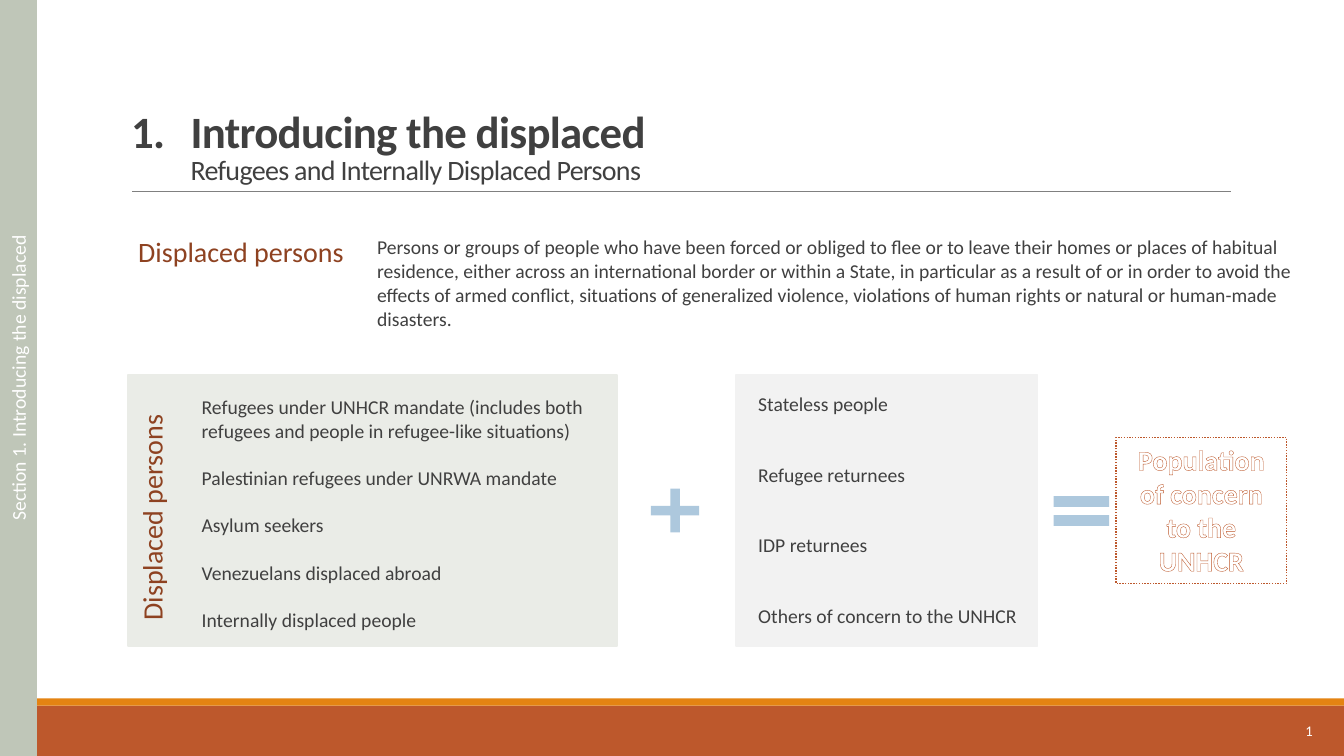
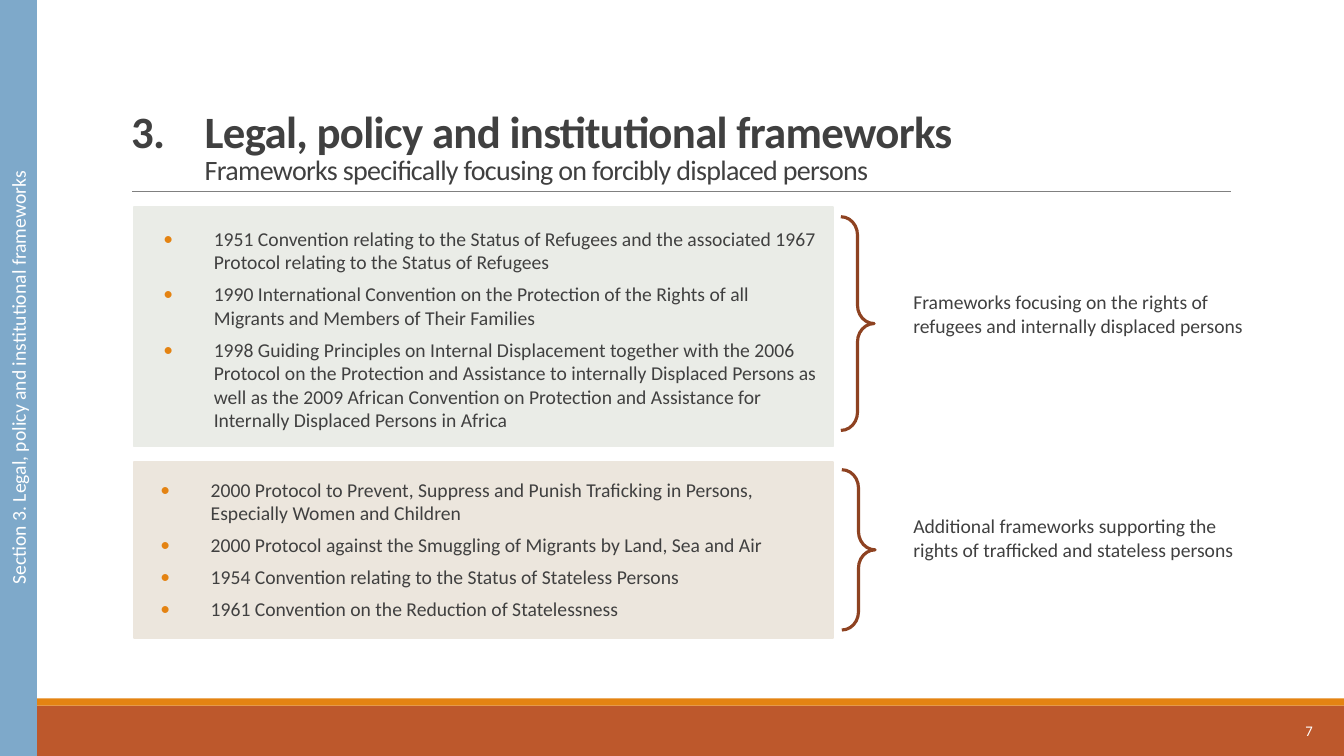
from copy import deepcopy

from lxml.etree import SubElement
from pptx import Presentation
from pptx.dml.color import RGBColor
from pptx.enum.dml import MSO_LINE
from pptx.enum.shapes import MSO_CONNECTOR, MSO_SHAPE
from pptx.enum.text import MSO_ANCHOR, MSO_AUTO_SIZE, PP_ALIGN
from pptx.oxml.ns import qn
from pptx.util import Inches, Pt

FONT = "Calibri"
WHITE = RGBColor(0xFF, 0xFF, 0xFF)
TEXT = RGBColor(0x40, 0x40, 0x40)
RULE = RGBColor(0x80, 0x80, 0x80)
RUST = RGBColor(0xBD, 0x58, 0x2C)
ORANGE = RGBColor(0xE4, 0x83, 0x12)
BROWN = RGBColor(0x8E, 0x42, 0x21)
SAGE = RGBColor(0xBF, 0xC6, 0xB8)
BLUE = RGBColor(0x7E, 0xA9, 0xCA)
PALE_BLUE = RGBColor(0xAD, 0xC8, 0xDD)
PALE_SAGE = RGBColor(0xEA, 0xEC, 0xE7)
PALE_GREY = RGBColor(0xF2, 0xF2, 0xF2)
PALE_SAND = RGBColor(0xEC, 0xE6, 0xDD)


def add_text(p, text, size=14, color=TEXT, bold=False, spacing=None, outline=None):
    r = p.add_run()
    r.text = text
    r.font.name = FONT
    r.font.size = Pt(size)
    r.font.bold = bold
    r.font.color.rgb = color
    rPr = r.font._element
    if spacing:
        rPr.set("spc", str(int(spacing * 100)))
    if outline:
        ln = SubElement(rPr, qn("a:ln"), w=str(Pt(0.5)))
        fill = SubElement(ln, qn("a:solidFill"))
        SubElement(fill, qn("a:srgbClr"), val=str(outline))
        rPr.insert(0, ln)
    return r


def hang(p, margin, indent):
    pPr = p._p.get_or_add_pPr()
    pPr.set("marL", str(Inches(margin)))
    pPr.set("indent", str(Inches(indent)))
    return pPr


def place(sp, x, y, w, h):
    sp.left, sp.top, sp.width, sp.height = map(Inches, (x, y, w, h))


class Deck:
    def __init__(self):
        self.prs = Presentation()
        self.prs.slide_width = Inches(13.33)
        self.prs.slide_height = Inches(7.5)
        self.s = None

    def slide(self, number, title, subtitle, page, color, hanging):
        self.s = self.prs.slides.add_slide(self.prs.slide_layouts[3])
        self.shape(MSO_SHAPE.RECTANGLE, 0, 7, 13.33, 0.5, fill=RUST)
        self.shape(MSO_SHAPE.RECTANGLE, 0, 6.93, 13.33, 0.07, fill=ORANGE)
        self.rule(1.31, 1.9, 12.21)
        self.title(number, title, subtitle, hanging)
        self.text(page, 11.69, 7.05, 1.43, 0.4, align=PP_ALIGN.RIGHT,
                  anchor=MSO_ANCHOR.MIDDLE, size=10.5, color=WHITE)
        bar = self.shape(MSO_SHAPE.RECTANGLE, 0, 0, 0.36, 7.5, fill=color, line=color)
        tf = bar.text_frame
        tf._txBody.bodyPr.set("vert", "vert270")
        tf.vertical_anchor = MSO_ANCHOR.MIDDLE
        tf.paragraphs[0].alignment = PP_ALIGN.CENTER
        add_text(tf.paragraphs[0], f"Section {number}. {title}", color=WHITE)

    def title(self, number, title, subtitle, hanging):
        sp = self.s.shapes.title
        place(sp, 1.2, 0.31, 11, 1.59)
        tf = sp.text_frame
        tf.auto_size = MSO_AUTO_SIZE.NONE
        tf.vertical_anchor = MSO_ANCHOR.BOTTOM
        p = tf.paragraphs[0]
        p.alignment = PP_ALIGN.LEFT
        p.line_spacing = 0.85
        hang(p, hanging, -hanging)
        r = add_text(p, f"{number}.\t{title}", size=32, bold=True, spacing=-0.5)
        p.add_line_break()
        p._p.find(qn("a:br")).append(deepcopy(r.font._element))
        add_text(p, subtitle, size=20, spacing=-0.5)

    def rule(self, x1, y, x2):
        c = self.s.shapes.add_connector(
            MSO_CONNECTOR.STRAIGHT, Inches(x1), Inches(y), Inches(x2), Inches(y))
        c.line.color.rgb = RULE
        c.line.width = Pt(0.5)
        SubElement(c._element.spPr, qn("a:effectLst"))

    def shape(self, kind, x, y, w, h, fill=None, line=None, width=1.25, adj=()):
        sp = self.s.shapes.add_shape(kind, *map(Inches, (x, y, w, h)))
        sp.shadow.inherit = False
        self.paint(sp, fill, line, width)
        for i, value in enumerate(adj):
            sp.adjustments[i] = value
        sp.text_frame.word_wrap = True
        return sp

    def paint(self, sp, fill, line, width=1.25):
        if fill is None:
            sp.fill.background()
        else:
            sp.fill.solid()
            sp.fill.fore_color.rgb = fill
        if line is None:
            sp.line.fill.background()
        else:
            sp.line.color.rgb = line
            sp.line.width = Pt(width)

    def text(self, text, x, y, w, h, align=PP_ALIGN.LEFT, anchor=MSO_ANCHOR.TOP,
             rotation=0, **fmt):
        sp = self.s.shapes.add_textbox(*map(Inches, (x, y, w, h)))
        sp.rotation = rotation
        tf = sp.text_frame
        tf.word_wrap = True
        tf.vertical_anchor = anchor
        tf.paragraphs[0].alignment = align
        add_text(tf.paragraphs[0], text, **fmt)

    def panel(self, idx, items, x, y, w, h, fill, insets, gap, margin=0):
        sp = self.s.placeholders[idx]
        place(sp, x, y, w, h)
        self.paint(sp, fill, fill)
        tf = sp.text_frame
        tf.auto_size = MSO_AUTO_SIZE.NONE
        tf.vertical_anchor = MSO_ANCHOR.TOP
        tf.margin_left, tf.margin_top, tf.margin_right = map(Inches, insets)
        for i, item in enumerate(items):
            p = tf.add_paragraph() if i else tf.paragraphs[0]
            p.space_before = Pt(0)
            p.space_after = Pt(gap)
            pPr = hang(p, margin, -0.5 if margin else 0)
            if margin:
                color = SubElement(pPr, qn("a:buClr"))
                SubElement(color, qn("a:srgbClr"), val=str(ORANGE))
                SubElement(pPr, qn("a:buFont"), typeface=FONT)
                SubElement(pPr, qn("a:buChar"), char="•")
            else:
                SubElement(pPr, qn("a:buNone"))
            add_text(p, item)

    def definition(self, term, meaning, x, y, widths, h):
        table = self.s.shapes.add_table(
            1, 2, Inches(x), Inches(y), Inches(sum(widths)), Inches(h)).table
        table.first_row = table.horz_banding = False
        formats = ({"size": 20, "color": BROWN}, {})
        for i, (text, fmt) in enumerate(zip((term, meaning), formats)):
            table.columns[i].width = Inches(widths[i])
            cell = table.cell(0, i)
            cell.fill.background()
            add_text(cell.text_frame.paragraphs[0], text, **fmt)

    def result(self, text, x, y, w, h):
        sp = self.shape(MSO_SHAPE.RECTANGLE, x, y, w, h, line=RUST, width=1)
        sp.line.dash_style = MSO_LINE.ROUND_DOT
        tf = sp.text_frame
        tf.vertical_anchor = MSO_ANCHOR.TOP
        tf.paragraphs[0].alignment = PP_ALIGN.CENTER
        add_text(tf.paragraphs[0], text, size=20, color=WHITE, bold=True, outline=RUST)

    def brace(self, text, x, y, h, text_y):
        self.shape(MSO_SHAPE.RIGHT_BRACE, x, y, 0.33, h, line=BROWN, width=2.25,
                   adj=(0.55, 0.5))
        self.text(text, 8.96, text_y, 3.6, 0.57)


def displaced(deck):
    deck.slide(1, "Introducing the displaced",
               "Refugees and Internally Displaced Persons", "1", SAGE, 0.59)
    deck.definition(
        "Displaced persons",
        "Persons or groups of people who have been forced or obliged to flee or to leave "
        "their homes or places of habitual residence, either across an international border "
        "or within a State, in particular as a result of or in order to avoid the effects of "
        "armed conflict, situations of generalized violence, violations of human rights or "
        "natural or human-made disasters.",
        1.27, 2.29, (2.37, 9.32), 1.03)
    deck.panel(1, (
        "Refugees under UNHCR mandate (includes both refugees and people in "
        "refugee-like situations)",
        "Palestinian refugees under UNRWA mandate",
        "Asylum seekers",
        "Venezuelans displaced abroad",
        "Internally displaced people",
    ), 1.27, 3.72, 4.85, 2.69, PALE_SAGE, (0.73, 0.2, 0.24), 17)
    deck.panel(2, (
        "Stateless people",
        "Refugee returnees",
        "IDP returnees",
        "Others of concern to the UNHCR",
    ), 7.3, 3.72, 2.99, 2.69, PALE_GREY, (0.22, 0.17, 0.18), 33.5)
    deck.text("Displaced persons", 0.31, 4.84, 2.39, 0.44, rotation=270,
              size=20, color=BROWN)
    deck.shape(MSO_SHAPE.MATH_PLUS, 6.37, 4.77, 0.65, 0.59, fill=PALE_BLUE, adj=(0.16,))
    deck.shape(MSO_SHAPE.MATH_EQUAL, 10.35, 4.72, 0.75, 0.7, fill=PALE_BLUE,
               adj=(0.15, 0.12))
    deck.result("Population of concern to the UNHCR", 11.07, 4.34, 1.69, 1.45)


def frameworks(deck):
    deck.slide(3, "Legal, policy and institutional frameworks",
               "Frameworks specifically focusing on forcibly displaced persons",
               "7", BLUE, 0.73)
    deck.panel(1, (
        "1951 Convention relating to the Status of Refugees and the associated 1967 "
        "Protocol relating to the Status of Refugees",
        "1990 International Convention on the Protection of the Rights of all Migrants "
        "and Members of Their Families",
        "1998 Guiding Principles on Internal Displacement together with the 2006 Protocol "
        "on the Protection and Assistance to internally Displaced Persons as well as the "
        "2009 African Convention on Protection and Assistance for Internally Displaced "
        "Persons in Africa",
    ), 1.33, 2.05, 6.93, 2.38, PALE_SAGE, (0, 0.2, 0.1), 6, margin=0.79)
    deck.panel(2, (
        "2000 Protocol to Prevent, Suppress and Punish Traficking in Persons, "
        "Especially Women and Children",
        "2000 Protocol against the Smuggling of Migrants by Land, Sea and Air",
        "1954 Convention relating to the Status of Stateless Persons",
        "1961 Convention on the Reduction of Statelessness",
    ), 1.33, 4.58, 6.93, 1.75, PALE_SAND, (0, 0.16, 0.1), 6, margin=0.76)
    deck.brace("Frameworks focusing on the rights of refugees and internally "
               "displaced persons", 8.34, 2.15, 2.12, 2.83)
    deck.brace("Additional frameworks supporting the rights of trafficked and "
               "stateless persons", 8.35, 4.66, 1.59, 5.05)


def main():
    deck = Deck()
    displaced(deck)
    frameworks(deck)
    deck.prs.save("out.pptx")


if __name__ == "__main__":
    main()
